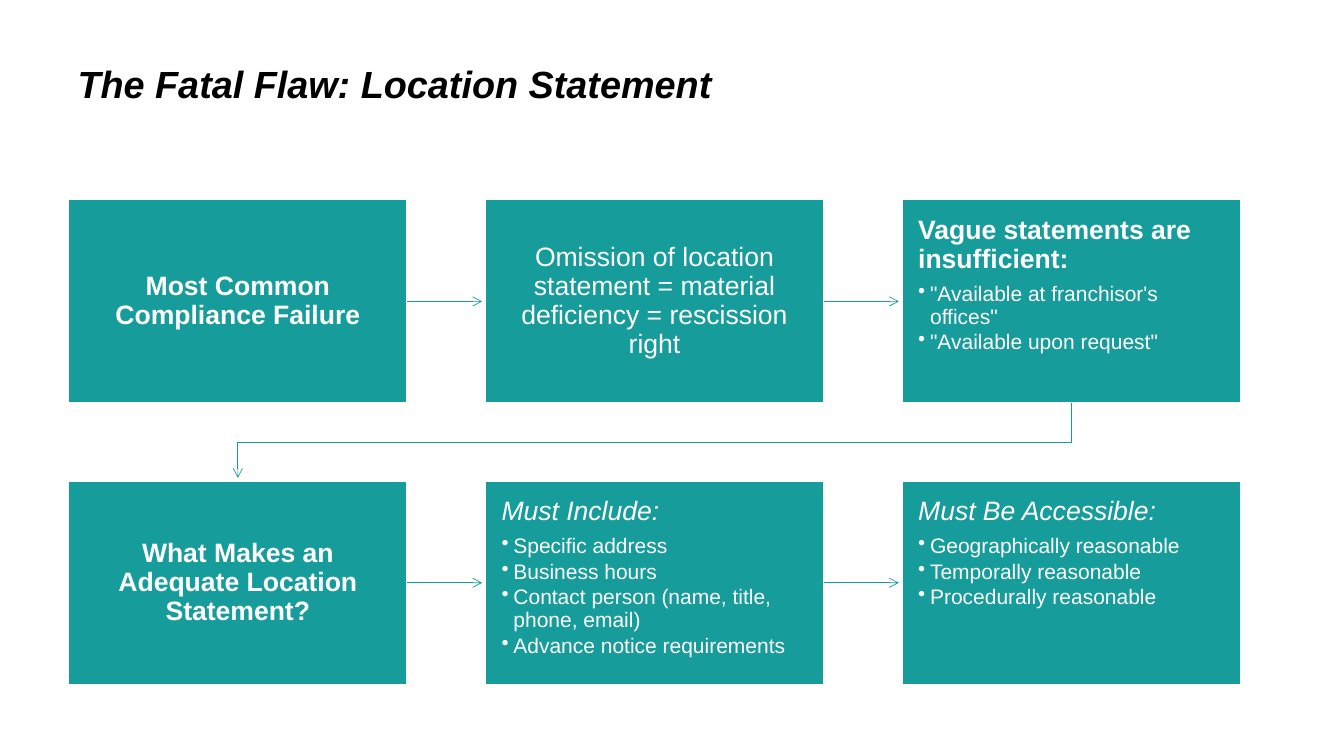
"""Build the location statement slide: six linked steps in two rows."""
from dataclasses import dataclass
from itertools import pairwise

from lxml import etree
from pptx import Presentation
from pptx import util as u
from pptx.dml.color import RGBColor
from pptx.enum import shapes, text
from pptx.oxml import ns


@dataclass(frozen=True)
class Theme:
    font: str = "Arial"
    teal: RGBColor = RGBColor(0x16, 0x9C, 0x9A)
    white: RGBColor = RGBColor(0xFF, 0xFF, 0xFF)
    black: RGBColor = RGBColor(0, 0, 0)
    title_size: int = 27
    heading_size: int = 19
    bullet_size: int = 15


@dataclass(frozen=True)
class Step:
    heading: str
    bullets: tuple[str, ...] = ()
    bold: bool = False
    italic: bool = False


THEME = Theme()
COLUMNS = 3
LEFT, TOP = 1.73, 5.03
WIDTH, HEIGHT = 8.53, 5.13
COLUMN_PITCH, ROW_PITCH = 10.5, 7.09
TIP_GAP = 0.08

STEPS = (
    Step("Most Common Compliance Failure", bold=True),
    Step("Omission of location statement = material deficiency = rescission right"),
    Step("Vague statements are insufficient:",
         ('"Available at franchisor\'s offices"', '"Available upon request"'), bold=True),
    Step("What Makes an Adequate Location Statement?", bold=True),
    Step("Must Include:",
         ("Specific address", "Business hours",
          "Contact person (name, title, phone, email)", "Advance notice requirements"),
         italic=True),
    Step("Must Be Accessible:",
         ("Geographically reasonable", "Temporally reasonable", "Procedurally reasonable"),
         italic=True),
)


def add_run(paragraph, words: str, size: int, color: RGBColor,
            bold: bool = False, italic: bool = False) -> None:
    """Append one formatted run with the shared line spacing."""
    paragraph.line_spacing = 0.9
    run = paragraph.add_run()
    run.text = words
    font = run.font
    font.name, font.size, font.color.rgb = THEME.font, u.Pt(size), color
    font.bold, font.italic = bold, italic


def add_title(slide, words: str) -> None:
    """Place and format the title placeholder."""
    title = slide.shapes.title
    title.left, title.top = u.Cm(1.7), u.Cm(1.52)
    title.width, title.height = u.Cm(29.6), u.Cm(3.15)
    frame = title.text_frame
    frame.vertical_anchor = text.MSO_ANCHOR.TOP
    frame.auto_size = text.MSO_AUTO_SIZE.NONE
    heading = frame.paragraphs[0]
    heading.alignment = text.PP_ALIGN.LEFT
    add_run(heading, words, THEME.title_size, THEME.black, bold=True, italic=True)


def add_bullet(frame, words: str) -> None:
    """Append one bulleted line with a hanging indent."""
    paragraph = frame.add_paragraph()
    paragraph.level = 1
    paragraph.alignment = text.PP_ALIGN.LEFT
    properties = paragraph._p.get_or_add_pPr()
    indent = u.Cm(0.3)
    properties.set("marL", str(indent))
    properties.set("indent", str(-indent))
    etree.SubElement(properties, ns.qn("a:buChar"), char="•")
    paragraph.space_after = u.Pt(2)
    add_run(paragraph, words, THEME.bullet_size, THEME.white)


def add_step(slide, index: int, step: Step):
    """Draw a step in its grid cell and return its box."""
    row, column = divmod(index, COLUMNS)
    box = slide.shapes.add_shape(
        shapes.MSO_SHAPE.RECTANGLE,
        u.Cm(LEFT + column * COLUMN_PITCH), u.Cm(TOP + row * ROW_PITCH),
        u.Cm(WIDTH), u.Cm(HEIGHT))
    box.shadow.inherit = False
    box.fill.solid()
    box.fill.fore_color.rgb = THEME.teal
    box.line.color.rgb = THEME.white
    box.line.width = u.Pt(1)
    frame = box.text_frame
    frame.word_wrap = True
    frame.margin_left = frame.margin_right = u.Cm(0.41)
    frame.margin_top = frame.margin_bottom = u.Cm(0.43)
    heading = frame.paragraphs[0]
    if step.bullets:
        frame.vertical_anchor = text.MSO_ANCHOR.TOP
        heading.alignment = text.PP_ALIGN.LEFT
        heading.space_after = u.Pt(6.5)
    else:
        frame.vertical_anchor = text.MSO_ANCHOR.MIDDLE
        heading.alignment = text.PP_ALIGN.CENTER
    add_run(heading, step.heading, THEME.heading_size, THEME.white, step.bold, step.italic)
    for bullet in step.bullets:
        add_bullet(frame, bullet)
    return box


def style_arrow(line) -> None:
    """Give a line the arrow colour, width and open head."""
    line.color.rgb = THEME.teal
    line.width = u.Pt(0.5)
    etree.SubElement(line._get_or_add_ln(), ns.qn("a:tailEnd"), type="arrow")


def link_across(slide, source, target) -> None:
    """Point a straight arrow at the next step in the row."""
    middle = source.top + source.height // 2
    arrow = slide.shapes.add_connector(
        shapes.MSO_CONNECTOR.STRAIGHT, source.left + source.width, middle,
        target.left - u.Cm(TIP_GAP), middle)
    arrow.begin_connect(source, 3)
    style_arrow(arrow.line)
    etree.SubElement(arrow._element.spPr, ns.qn("a:effectLst"))


def link_down(slide, source, target) -> None:
    """Point a bent arrow at the first step of the next row."""
    start_x = source.left + source.width // 2
    end_x = target.left + target.width // 2
    bottom = source.top + source.height
    bend = (bottom + target.top) // 2
    outline = slide.shapes.build_freeform(start_x, bottom)
    outline.add_line_segments(
        [(start_x, bend), (end_x, bend), (end_x, target.top - u.Cm(TIP_GAP))], close=False)
    arrow = outline.convert_to_shape()
    arrow.shadow.inherit = False
    arrow.fill.background()
    style_arrow(arrow.line)


def main() -> None:
    """Create and save the presentation."""
    deck = Presentation()
    deck.slide_width, deck.slide_height = u.Cm(33.87), u.Cm(19.05)
    slide = deck.slides.add_slide(deck.slide_layouts[5])
    add_title(slide, "The Fatal Flaw: Location Statement")
    boxes = [add_step(slide, index, step) for index, step in enumerate(STEPS)]
    for source, target in pairwise(boxes):
        link = link_across if source.top == target.top else link_down
        link(slide, source, target)
    deck.save("out.pptx")


if __name__ == "__main__":
    main()
